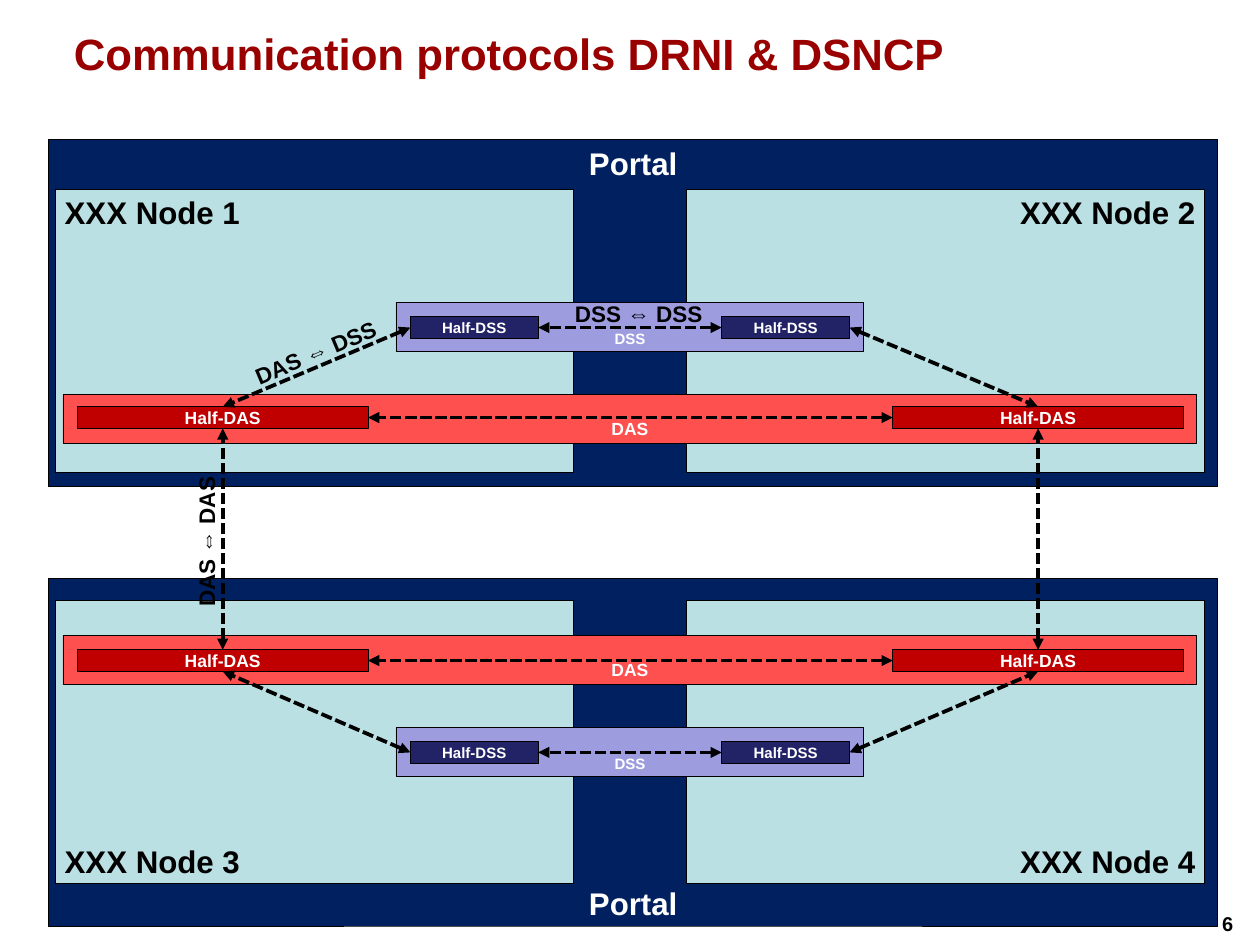
from pptx import Presentation
from pptx.dml.color import RGBColor
from pptx.enum import dml, shapes, text
from pptx.oxml import ns
from pptx.oxml.xmlchemy import OxmlElement
from pptx.util import Inches, Pt

TOP, MIDDLE, BOTTOM = (text.MSO_ANCHOR.TOP, text.MSO_ANCHOR.MIDDLE,
                       text.MSO_ANCHOR.BOTTOM)
LEFT, CENTER, RIGHT = text.PP_ALIGN.LEFT, text.PP_ALIGN.CENTER, text.PP_ALIGN.RIGHT
SITE_TOP, SITE_LEFT, SITE_BOTTOM, SITE_RIGHT = range(4)

BLACK, WHITE = "000000", "FFFFFF"
DAS_BAR, DAS_HALF = "FF5050", "C00000"
DSS_BAR, DSS_HALF = "9C9CDF", "222267"


def color(hex_string):
    return RGBColor.from_string(hex_string)


def write(shape, words, size, hex_color, align=LEFT, anchor=TOP, wrap=True):
    frame = shape.text_frame
    frame.word_wrap = wrap
    frame.vertical_anchor = anchor
    paragraph = frame.paragraphs[0]
    paragraph.alignment = align
    run = paragraph.add_run()
    run.text = words
    run.font.name = "Arial"
    run.font.size = Pt(size)
    run.font.bold = True
    run.font.color.rgb = color(hex_color)


def add_box(slide, box, fill, words, size, hex_color=WHITE, align=CENTER, anchor=TOP):
    shape = slide.shapes.add_shape(shapes.MSO_SHAPE.RECTANGLE, *map(Inches, box))
    shape.shadow.inherit = False
    shape.fill.solid()
    shape.fill.fore_color.rgb = color(fill)
    shape.line.color.rgb = color(BLACK)
    shape.line.width = Pt(0.75)
    write(shape, words, size, hex_color, align, anchor)
    return shape


def add_label(slide, box, words, size, hex_color=BLACK, rotation=0, wrap=False,
              margins=(0.1, 0.05)):
    label = slide.shapes.add_textbox(*map(Inches, box))
    label.rotation = rotation
    frame = label.text_frame
    frame.margin_left = frame.margin_right = Inches(margins[0])
    frame.margin_top = frame.margin_bottom = Inches(margins[1])
    write(label, words, size, hex_color, wrap=wrap)


def add_link(slide, begin, begin_site, end, end_site):
    """Join two boxes with a dashed line that has an arrowhead at each end."""
    link = slide.shapes.add_connector(shapes.MSO_CONNECTOR.STRAIGHT, 0, 0, 0, 0)
    link.begin_connect(begin, begin_site)
    link.end_connect(end, end_site)
    link.line.color.rgb = color(BLACK)
    link.line.width = Pt(3)
    link.line.dash_style = dml.MSO_LINE.SQUARE_DOT
    properties = link._element.spPr
    outline = properties.find(ns.qn("a:ln"))
    for tag in ("a:headEnd", "a:tailEnd"):
        arrowhead = OxmlElement(tag)
        arrowhead.set("type", "triangle")
        outline.append(arrowhead)
    properties.append(OxmlElement("a:effectLst"))


def add_half_pair(slide, lefts, top, width, fill, words, size):
    return [add_box(slide, (left, top, width, 0.24), fill, words, size, anchor=MIDDLE)
            for left in lefts]


def add_portal(slide, top, node_top, das_top, das_half_top, dss_top, nodes, anchor):
    """Draw a portal and return its Half-DAS and Half-DSS pairs."""
    add_box(slide, (0.54, top, 12.99, 3.86), "002060", "Portal", 25, anchor=anchor)
    for left, name, align in zip((0.62, 7.63), nodes, (LEFT, RIGHT)):
        add_box(slide, (left, node_top, 5.75, 3.15), "BBE0E3", name, 25, BLACK,
                align, anchor)
    add_box(slide, (0.7, das_top, 12.6, 0.55), DAS_BAR, "DAS", 14, anchor=BOTTOM)
    add_box(slide, (4.4, dss_top, 5.2, 0.55), DSS_BAR, "DSS", 12, anchor=BOTTOM)
    das = add_half_pair(slide, (0.86, 9.92), das_half_top, 3.23, DAS_HALF,
                        "Half-DAS", 14)
    dss = add_half_pair(slide, (4.56, 8.02), dss_top + 0.16, 1.42, DSS_HALF,
                        "Half-DSS", 12)
    return das, dss


def link_portal(slide, das, dss, das_site):
    """Link the halves across the nodes, and DAS to DSS within each node."""
    for left, right in (das, dss):
        add_link(slide, right, SITE_LEFT, left, SITE_RIGHT)
    for half_das, half_dss, dss_site in zip(das, dss, (SITE_LEFT, SITE_RIGHT)):
        add_link(slide, half_dss, dss_site, half_das, das_site)


def main():
    presentation = Presentation()
    presentation.slide_width = Inches(14)
    presentation.slide_height = Inches(10.5)
    slide = presentation.slides.add_slide(presentation.slide_layouts[6])

    add_label(slide, (13.46, 10.07, 0.52, 0.39), "6", 16, margins=(0.12, 0.06))
    add_label(slide, (0.7, 0.24, 12.6, 1.33), "Communication protocols DRNI & DSNCP",
              35, "990000", wrap=True, margins=(0.12, 0.06))

    lower_das, lower_dss = add_portal(slide, 6.43, 6.67, 7.06, 7.22, 8.08,
                                      ("XXX Node 3", "XXX Node 4"), BOTTOM)
    upper_das, upper_dss = add_portal(slide, 1.55, 2.1, 4.38, 4.52, 3.36,
                                      ("XXX Node 1", "XXX Node 2"), TOP)

    link_portal(slide, lower_das, lower_dss, SITE_BOTTOM)
    link_portal(slide, upper_das, upper_dss, SITE_TOP)
    for lower, upper in zip(lower_das, upper_das):
        add_link(slide, lower, SITE_TOP, upper, SITE_BOTTOM)

    add_label(slide, (2.69, 3.71, 1.65, 0.4), "DAS ⇔ DSS", 18, rotation=337.2)
    add_label(slide, (6.29, 3.28, 1.65, 0.4), "DSS ⇔ DSS", 18)
    add_label(slide, (1.45, 5.8, 1.68, 0.4), "DAS ⇔ DAS", 18, rotation=270)

    presentation.save("out.pptx")


if __name__ == "__main__":
    main()
